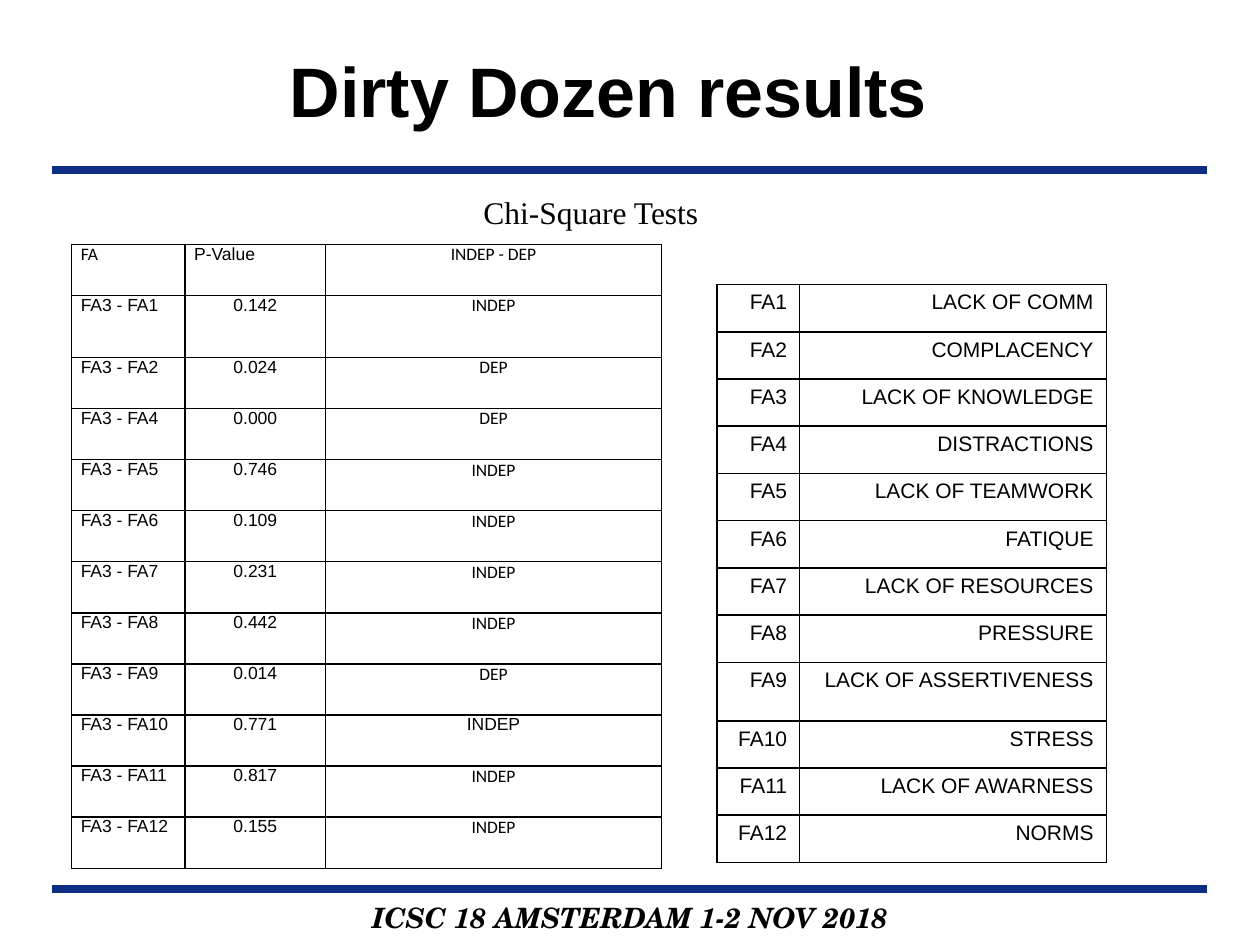
from dataclasses import dataclass

from lxml.etree import SubElement
from pptx import Presentation
from pptx.dml.color import RGBColor
from pptx.enum.shapes import MSO_CONNECTOR
from pptx.enum.text import MSO_ANCHOR, PP_ALIGN
from pptx.oxml.ns import qn
from pptx.util import Pt


@dataclass(frozen=True)
class Theme:
    ink: RGBColor = RGBColor(0x00, 0x00, 0x00)
    navy: RGBColor = RGBColor(0x0C, 0x2D, 0x83)
    sans: str = "Arial"
    body: str = "Calibri"
    serif: str = "Times New Roman"
    school: str = "TeX Gyre Schola"
    title: int = 40
    head: int = 18
    foot: int = 16
    key: int = 12
    test: int = 10


THEME = Theme()
LEFT, MID, RIGHT, JUST = PP_ALIGN.LEFT, PP_ALIGN.CENTER, PP_ALIGN.RIGHT, PP_ALIGN.JUSTIFY

FACTORS = [
    "LACK OF COMM", "COMPLACENCY", "LACK OF KNOWLEDGE", "DISTRACTIONS",
    "LACK OF TEAMWORK", "FATIQUE", "LACK OF RESOURCES", "PRESSURE",
    "LACK OF ASSERTIVENESS", "STRESS", "LACK OF AWARNESS", "NORMS",
]
# Factor compared with FA3, and the p-value of the test
TESTS = {
    1: "0.142", 2: "0.024", 4: "0.000", 5: "0.746", 6: "0.109", 7: "0.231",
    8: "0.442", 9: "0.014", 10: "0.771", 11: "0.817", 12: "0.155",
}
LIMIT = 0.05


def write(frame, text, face, size, align, bold=False, slant=False):
    frame.text = text
    para = frame.paragraphs[0]
    para.alignment = align
    font = para.runs[0].font
    font.name, font.size = face, Pt(size)
    font.bold, font.italic = bold, slant
    font.color.rgb = THEME.ink
    return para


def place(shape, left, top, width, height):
    """Set the box of a text shape and give it narrow margins."""
    shape.left, shape.top = Pt(left), Pt(top)
    shape.width, shape.height = Pt(width), Pt(height)
    frame = shape.text_frame
    frame.word_wrap = True
    frame.vertical_anchor = MSO_ANCHOR.TOP
    frame.margin_left = frame.margin_right = Pt(3.6)
    frame.margin_top = frame.margin_bottom = Pt(3.6)
    return frame


def add_text(slide, box, *style):
    shape = slide.shapes.add_textbox(0, 0, 0, 0)
    write(place(shape, *box), *style)


def add_rule(slide, top):
    rule = slide.shapes.add_connector(
        MSO_CONNECTOR.STRAIGHT, Pt(30), Pt(top), Pt(690), Pt(top))
    rule.line.color.rgb = THEME.navy
    rule.line.width = Pt(4.5)
    SubElement(rule._element.spPr, qn("a:effectLst"))


def frame_cell(cell):
    """Give a cell black borders and no fill."""
    props = cell._tc.get_or_add_tcPr()
    for side in ("lnL", "lnR", "lnT", "lnB"):
        edge = SubElement(props, qn(f"a:{side}"), w=str(Pt(1)))
        fill = SubElement(edge, qn("a:solidFill"))
        SubElement(fill, qn("a:srgbClr"), val=str(THEME.ink))
    cell.fill.background()


def add_grid(slide, left, top, cols, rows):
    shape = slide.shapes.add_table(
        len(rows), len(cols), Pt(left), Pt(top), Pt(sum(cols)), Pt(sum(rows)))
    grid = shape.table
    grid.first_row = grid.horz_banding = False
    for col, width in zip(grid.columns, cols):
        col.width = Pt(width)
    for row, height in zip(grid.rows, rows):
        row.height = Pt(height)
    for cell in grid.iter_cells():
        frame_cell(cell)
    return grid


def add_key(slide):
    """Table that names the twelve factors."""
    rows = [27] * len(FACTORS)
    rows[8] = 33.4
    grid = add_grid(slide, 409.7, 162.6, [47.3, 175.2], rows)
    for num, name in enumerate(FACTORS, 1):
        for col, text in enumerate((f"FA{num}", name)):
            cell = grid.cell(num - 1, col)
            write(cell.text_frame, text, THEME.sans, THEME.key, RIGHT)


def add_tests(slide):
    """Table of the chi-square tests against FA3."""
    lines = [("FA", "P-Value", "INDEP - DEP")]
    for num, value in TESTS.items():
        state = "DEP" if float(value) < LIMIT else "INDEP"
        lines.append((f"FA3 - FA{num}", value, state))
    rows = [29.2] * len(lines)
    rows[1] = 35.4
    grid = add_grid(slide, 41, 139.6, [64.8, 80.2, 192], rows)
    faces = {(0, 0): THEME.body, (9, 2): THEME.sans}
    for row, line in enumerate(lines):
        for col, text in enumerate(line):
            cell = grid.cell(row, col)
            cell.margin_left = cell.margin_right = Pt(5.2)
            cell.margin_top = cell.margin_bottom = 0
            face = faces.get((row, col), THEME.body if col == 2 else THEME.sans)
            align = JUST if col == 0 or (row, col) == (0, 1) else MID
            para = write(cell.text_frame, text, face, THEME.test, align)
            para.space_after = Pt(6)


def main():
    deck = Presentation()
    deck.slide_width, deck.slide_height = Pt(720), Pt(540)
    slide = deck.slides.add_slide(deck.slide_layouts[5])
    for top in (97, 508):
        add_rule(slide, top)
    add_text(slide, (30, 511.2, 660, 26.6), "ICSC 18 AMSTERDAM 1-2 NOV 2018",
             THEME.school, THEME.foot, MID, True, True)
    title = place(slide.shapes.title, 162, 23.8, 396.7, 55.4)
    write(title, "Dirty Dozen results", THEME.sans, THEME.title, LEFT, True)
    add_key(slide)
    add_text(slide, (265.7, 106.6, 144, 28.8), "Chi-Square Tests",
             THEME.serif, THEME.head, MID)
    add_tests(slide)
    deck.save("out.pptx")


if __name__ == "__main__":
    main()
